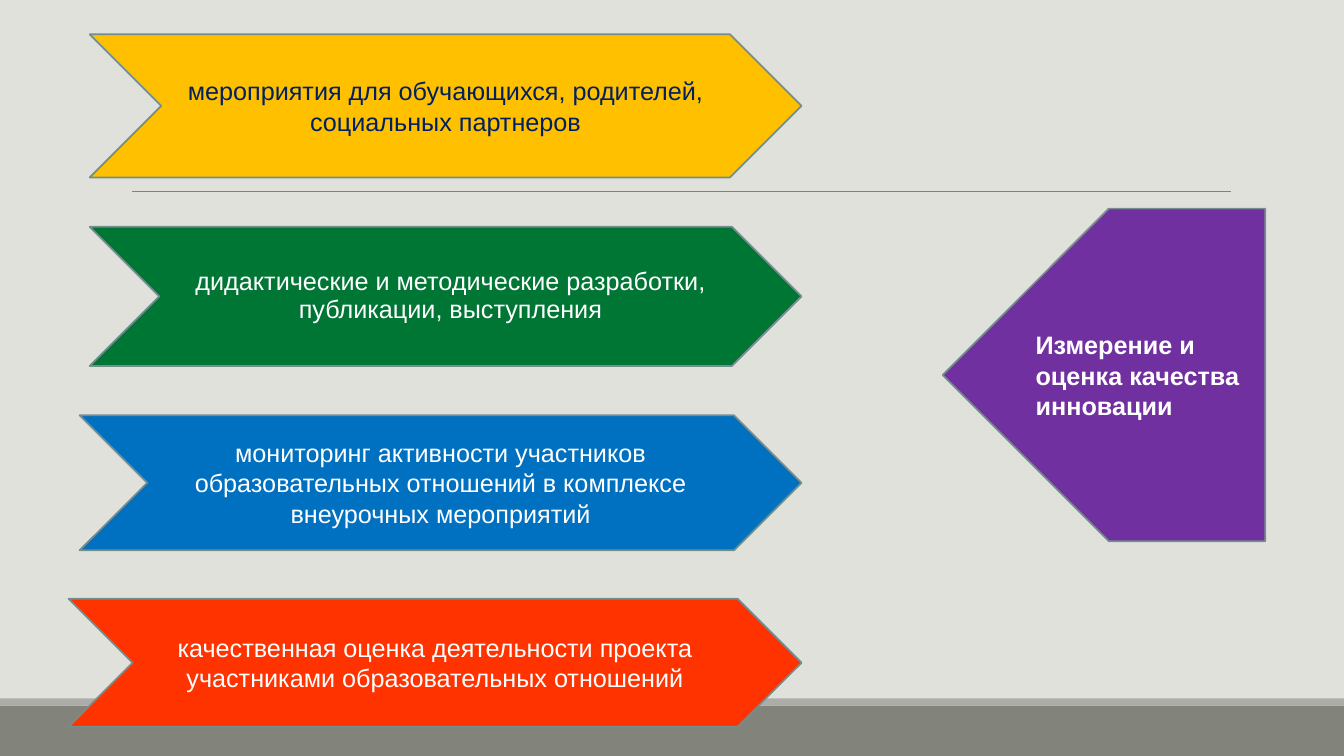
import pptx
import pptx.dml.color
import pptx.enum.shapes
import pptx.enum.text
import pptx.oxml
import pptx.oxml.ns
import pptx.util

Inches = pptx.util.Inches
Pt = pptx.util.Pt
SHAPE = pptx.enum.shapes.MSO_SHAPE
ALIGN = pptx.enum.text.PP_ALIGN
OUTLINE = "748D8D"
WHITE = "FFFFFF"
ARROW_TIP = 7.95

RESULTS = [
    (0.89, 0.34, 1.42, "FFC000", "002060",
     "мероприятия для обучающихся, родителей, социальных партнеров"),
    (0.89, 2.25, 1.38, "007635", WHITE,
     "дидактические и методические разработки, публикации, выступления"),
    (0.79, 4.12, 1.34, "0070C0", WHITE,
     "мониторинг активности участников образовательных отношений в комплексе внеурочных мероприятий"),
    (0.68, 5.94, 1.27, "FF3300", WHITE,
     "качественная оценка деятельности проекта участниками образовательных отношений"),
]


def color(value):
    """Turn a hex string into a colour."""
    return pptx.dml.color.RGBColor.from_string(value)


def add_box(page, kind, left, top, width, height, fill, outline=None):
    """Add a filled preset shape, outlined if a line colour is given."""
    box = page.shapes.add_shape(kind, Inches(left), Inches(top), Inches(width), Inches(height))
    box.shadow.inherit = False
    box.fill.solid()
    box.fill.fore_color.rgb = color(fill)
    if outline:
        box.line.color.rgb = color(outline)
        box.line.width = Pt(1.25)
    else:
        box.line.fill.background()
    return box


def add_label(box, text, text_color, align, bold=False):
    """Write one vertically centred paragraph in a shape and return it."""
    frame = box.text_frame
    frame.word_wrap = True
    frame.vertical_anchor = pptx.enum.text.MSO_ANCHOR.MIDDLE
    para = frame.paragraphs[0]
    para.alignment = align
    span = para.add_run()
    span.text = text
    span.font.name = "Arial"
    span.font.size = Pt(18)
    span.font.bold = bold
    span.font.color.rgb = color(text_color)
    return para


def add_rule(page, left, right, top):
    """Add a thin horizontal line."""
    rule = page.shapes.add_connector(
        pptx.enum.shapes.MSO_CONNECTOR.STRAIGHT,
        Inches(left), Inches(top), Inches(right), Inches(top))
    rule.line.color.rgb = color("808080")
    rule.line.width = Pt(0.5)
    rule._element.spPr.append(pptx.oxml.parse_xml(
        "<a:effectLst %s/>" % pptx.oxml.ns.nsdecls("a")))


def add_goal(page):
    """Add the left-pointing pentagon with the goal."""
    goal = add_box(page, SHAPE.PENTAGON, 9.35, 2.07, 3.2, 3.3, "7030A0", OUTLINE)
    goal.adjustments[0] = 0.515
    goal._element.spPr.find(pptx.oxml.ns.qn("a:xfrm")).set("flipH", "1")
    add_label(goal, "Измерение и оценка качества инновации", WHITE, ALIGN.LEFT, True)


def add_results(page):
    """Add the chevrons, whose tips share one vertical line."""
    labels = []
    for left, top, height, fill, text_color, text in RESULTS:
        box = add_box(page, SHAPE.CHEVRON, left, top, ARROW_TIP - left, height, fill, OUTLINE)
        labels.append((box, add_label(box, text, text_color, ALIGN.CENTER)))
    box, para = labels[1]
    box.text_frame.margin_left = Inches(0.1)
    box.text_frame.margin_right = 0
    para.line_spacing = 0.9
    para.space_before = Pt(12)
    para.space_after = Pt(2)


def main():
    """Build the slide and save the deck."""
    deck = pptx.Presentation()
    deck.slide_width = Inches(13.33)
    deck.slide_height = Inches(7.5)
    page = deck.slides.add_slide(deck.slide_layouts[6])
    page.background.fill.solid()
    page.background.fill.fore_color.rgb = color("E1E1DB")
    add_box(page, SHAPE.RECTANGLE, 0, 7, 13.33, 0.5, "82847C")
    add_box(page, SHAPE.RECTANGLE, 0, 6.93, 13.33, 0.07, "ACADA8")
    add_rule(page, 1.31, 12.21, 1.9)
    add_goal(page)
    add_results(page)
    deck.save("out.pptx")


if __name__ == "__main__":
    main()
